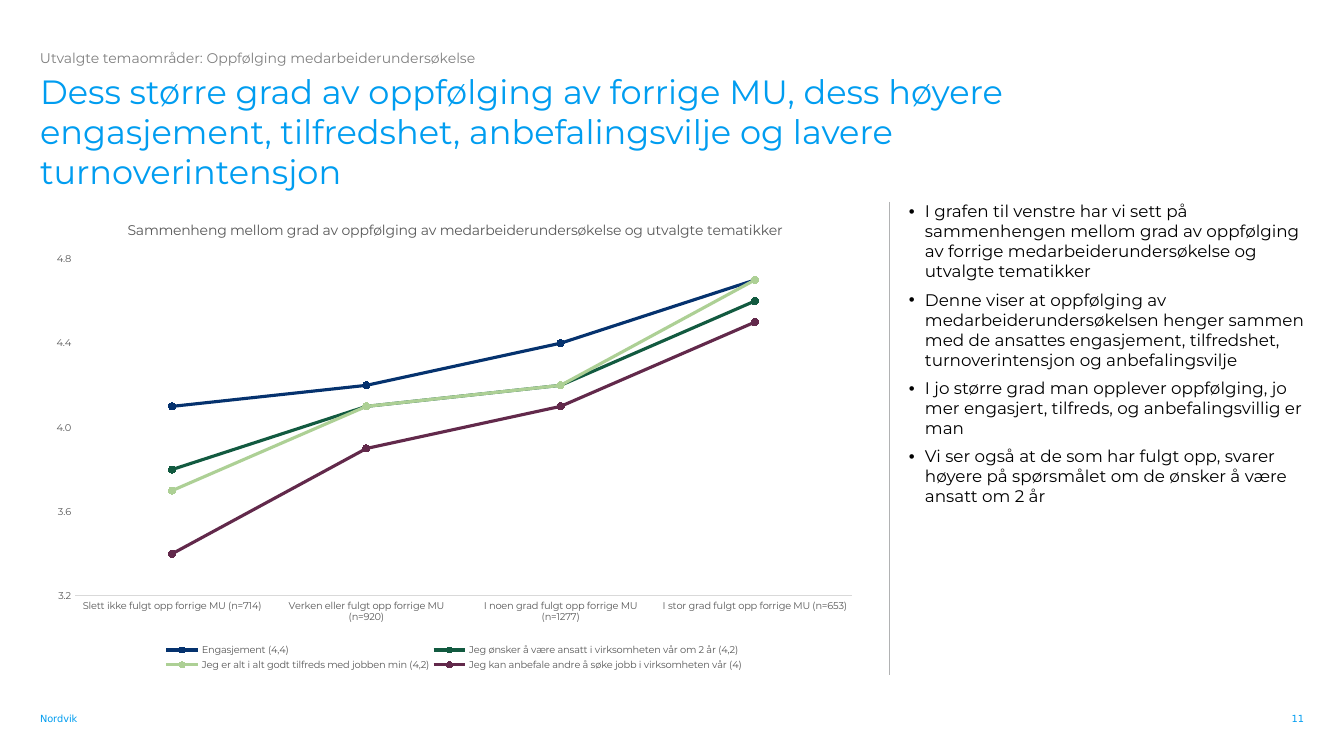
"""Build the slide on follow-up of the employee survey and its related themes."""
from dataclasses import dataclass
from typing import Any

import lxml.etree
import pptx
import pptx.chart.data
import pptx.dml.color
import pptx.enum.chart
import pptx.enum.shapes
import pptx.enum.text
import pptx.oxml
import pptx.oxml.ns
import pptx.util

RGBColor = pptx.dml.color.RGBColor
ALIGN = pptx.enum.text.PP_ALIGN
ANCHOR = pptx.enum.text.MSO_ANCHOR

PX_PER_INCH = 100.8
BLACK = RGBColor(0x00, 0x00, 0x00)
WHITE = RGBColor(0xFF, 0xFF, 0xFF)
CYAN = RGBColor(0x00, 0x9D, 0xF0)
GREY = RGBColor(0x80, 0x80, 0x80)
LABEL_GREY = RGBColor(0x59, 0x59, 0x59)
AXIS_GREY = RGBColor(0xD9, 0xD9, 0xD9)
DIVIDER_GREY = RGBColor(0xB1, 0xB2, 0xB3)
NAVY = RGBColor(0x05, 0x32, 0x6E)
FOREST = RGBColor(0x12, 0x5A, 0x40)
LIME = RGBColor(0xAD, 0xD0, 0x95)
PLUM = RGBColor(0x62, 0x29, 0x4B)
TEXT_FONT = "Montserrat"
FOOTER_FONT = "DejaVu Sans"


@dataclass(frozen=True)
class Box:
    left: int
    top: int
    width: int
    height: int


@dataclass(frozen=True)
class Label:
    text: str
    box: Box
    size: int
    color: RGBColor
    font: str = TEXT_FONT
    align: Any = ALIGN.LEFT
    anchor: Any = ANCHOR.TOP


@dataclass(frozen=True)
class Theme:
    name: str
    scores: tuple[float, ...]
    color: RGBColor


HEADING = Label(
    "Dess større grad av oppfølging av forrige MU, dess høyere engasjement, "
    "tilfredshet, anbefalingsvilje og lavere turnoverintensjon",
    Box(40, 73, 1155, 103), 24, CYAN)
FINDINGS = Label(
    "I grafen til venstre har vi sett på sammenhengen mellom grad av oppfølging "
    "av forrige medarbeiderundersøkelse og utvalgte tematikker\n"
    "Denne viser at oppfølging av medarbeiderundersøkelsen henger sammen med de "
    "ansattes engasjement, tilfredshet, turnoverintensjon og anbefalingsvilje\n"
    "I jo større grad man opplever oppfølging, jo mer engasjert, tilfreds, og "
    "anbefalingsvillig er man\n"
    "Vi ser også at de som har fulgt opp, svarer høyere på spørsmålet om de "
    "ønsker å være ansatt om 2 år",
    Box(909, 202, 398, 474), 12, BLACK)
LABELS = (
    Label("Utvalgte temaområder: Oppfølging medarbeiderundersøkelse",
          Box(40, 50, 454, 17), 10, GREY),
    Label("Nordvik", Box(40, 701, 86, 24), 7, CYAN, FOOTER_FONT, anchor=ANCHOR.BOTTOM),
    Label("11", Box(1234, 713, 70, 12), 7, CYAN, FOOTER_FONT, ALIGN.RIGHT, ANCHOR.BOTTOM),
)
CHART_BOX = Box(39, 202, 830, 474)
PLOT_BOX = Box(75, 259, 777, 337)
CHART_TITLE_BOX = Box(125, 218, 657, 18)
LEGEND_BOX = Box(162, 641, 584, 33)
CHART_TITLE = ("Sammenheng mellom grad av oppfølging av medarbeiderundersøkelse "
               "og utvalgte tematikker")
FOLLOW_UP_GRADES = (
    "Slett ikke fulgt opp forrige MU (n=714)",
    "Verken eller fulgt opp forrige MU (n=920)",
    "I noen grad fulgt opp forrige MU (n=1277)",
    "I stor grad fulgt opp forrige MU (n=653)",
)
THEMES = (
    Theme("Engasjement (4,4)", (4.1, 4.2, 4.4, 4.7), NAVY),
    Theme("Jeg ønsker å være ansatt i virksomheten vår om 2 år (4,2)",
          (3.8, 4.1, 4.2, 4.6), FOREST),
    Theme("Jeg er alt i alt godt tilfreds med jobben min (4,2)",
          (3.7, 4.1, 4.2, 4.7), LIME),
    Theme("Jeg kan anbefale andre å søke jobb i virksomheten vår (4)",
          (3.4, 3.9, 4.1, 4.5), PLUM),
)


def px(length: int) -> pptx.util.Emu:
    return pptx.util.Emu(round(length * 914400 / PX_PER_INCH))


def edges(box: Box) -> tuple[pptx.util.Emu, ...]:
    return px(box.left), px(box.top), px(box.width), px(box.height)


def assign(target: Any, values: dict[str, Any]) -> None:
    for name, value in values.items():
        setattr(target, name, value)


def style_font(font: Any, size: int, color: RGBColor, family: str = TEXT_FONT) -> None:
    assign(font, {"size": pptx.util.Pt(size), "name": family, "bold": False})
    font.color.rgb = color


def write_label(holder: Any, label: Label, space_after: int = 0) -> None:
    left, top, width, height = edges(label.box)
    assign(holder, {"left": left, "top": top, "width": width, "height": height})
    frame = holder.text_frame
    assign(frame, {
        "text": label.text, "word_wrap": True, "vertical_anchor": label.anchor,
        "auto_size": pptx.enum.text.MSO_AUTO_SIZE.NONE,
        "margin_left": 0, "margin_top": 0, "margin_right": 0, "margin_bottom": 0,
    })
    for paragraph in frame.paragraphs:
        assign(paragraph, {"alignment": label.align, "line_spacing": 0.99,
                           "space_before": pptx.util.Pt(0),
                           "space_after": pptx.util.Pt(space_after)})
        style_font(paragraph.runs[0].font, label.size, label.color, label.font)


def add_bullets(frame: Any) -> None:
    for paragraph in frame.paragraphs:
        properties = paragraph._p.get_or_add_pPr()
        properties.set("marL", str(px(16)))
        properties.set("indent", str(px(-16)))
        bullet = lxml.etree.SubElement(properties, pptx.oxml.ns.qn("a:buChar"))
        bullet.set("char", "•")


def place_chart_part(part: Any, box: Box, index: int, inner: bool = False) -> None:
    for previous in part.findall(pptx.oxml.ns.qn("c:layout")):
        part.remove(previous)
    layout = pptx.oxml.parse_xml(f"<c:layout {pptx.oxml.ns.nsdecls('c')}><c:manualLayout/></c:layout>")
    settings = {
        **({"layoutTarget": "inner"} if inner else {}),
        "xMode": "edge", "yMode": "edge",
        "x": round((box.left - CHART_BOX.left) / CHART_BOX.width, 4),
        "y": round((box.top - CHART_BOX.top) / CHART_BOX.height, 4),
        "w": round(box.width / CHART_BOX.width, 4),
        "h": round(box.height / CHART_BOX.height, 4),
    }
    for name, value in settings.items():
        lxml.etree.SubElement(layout[0], pptx.oxml.ns.qn(f"c:{name}")).set("val", str(value))
    part.insert(index, layout)


def add_theme_chart(slide: Any) -> None:
    survey = pptx.chart.data.CategoryChartData(number_format="###0.0")
    survey.categories = FOLLOW_UP_GRADES
    for theme in THEMES:
        survey.add_series(theme.name, theme.scores)
    chart = slide.shapes.add_chart(
        pptx.enum.chart.XL_CHART_TYPE.LINE_MARKERS, *edges(CHART_BOX), survey).chart
    style_font(chart.font, 10, BLACK)
    assign(chart, {"has_title": True, "has_legend": True})
    heading = chart.chart_title.text_frame
    heading.text = CHART_TITLE
    style_font(heading.paragraphs[0].runs[0].font, 10, LABEL_GREY)
    assign(chart.legend, {"position": pptx.enum.chart.XL_LEGEND_POSITION.BOTTOM,
                          "include_in_layout": False})
    style_font(chart.legend.font, 7, LABEL_GREY)

    for axis in (chart.category_axis, chart.value_axis):
        assign(axis, {"has_major_gridlines": False,
                      "major_tick_mark": pptx.enum.chart.XL_TICK_MARK.NONE,
                      "minor_tick_mark": pptx.enum.chart.XL_TICK_MARK.NONE})
        style_font(axis.tick_labels.font, 7, LABEL_GREY)
    chart.category_axis._element.txPr.bodyPr.set("rot", "0")
    chart.category_axis.format.line.color.rgb = AXIS_GREY
    chart.category_axis.format.line.width = pptx.util.Pt(0.75)
    assign(chart.value_axis, {"minimum_scale": 3.2, "maximum_scale": 4.8, "major_unit": 0.4})
    assign(chart.value_axis.tick_labels, {"number_format": "###0.0",
                                          "number_format_is_linked": False})
    chart.value_axis.format.line.fill.background()

    chart.plots[0].vary_by_categories = False
    for curve, theme in zip(chart.plots[0].series, THEMES):
        curve.smooth = False
        curve.format.line.color.rgb = theme.color
        curve.format.line.width = pptx.util.Pt(2.25)
        assign(curve.marker, {"style": pptx.enum.chart.XL_MARKER_STYLE.CIRCLE, "size": 5})
        curve.marker.format.fill.solid()
        curve.marker.format.fill.fore_color.rgb = theme.color
        curve.marker.format.line.color.rgb = theme.color

    place_chart_part(chart.chart_title._element, CHART_TITLE_BOX, 1)
    place_chart_part(chart.legend._element, LEGEND_BOX, 1)
    place_chart_part(chart._chartSpace.chart.plotArea, PLOT_BOX, 0, inner=True)


def add_divider(slide: Any) -> None:
    divider = slide.shapes.add_connector(
        pptx.enum.shapes.MSO_CONNECTOR.STRAIGHT, px(889), px(202), px(889), px(675))
    divider.line.color.rgb = DIVIDER_GREY
    divider.line.width = pptx.util.Pt(0.5)
    lxml.etree.SubElement(divider._element.spPr, pptx.oxml.ns.qn("a:effectLst"))


def main() -> None:
    deck = pptx.Presentation()
    assign(deck, {"slide_width": px(1344), "slide_height": px(756)})
    slide = deck.slides.add_slide(deck.slide_layouts[1])
    slide.background.fill.solid()
    slide.background.fill.fore_color.rgb = WHITE
    add_divider(slide)
    write_label(slide.shapes.title, HEADING)
    findings = slide.placeholders[1]
    write_label(findings, FINDINGS, space_after=6)
    add_bullets(findings.text_frame)
    for label in LABELS:
        write_label(slide.shapes.add_textbox(*edges(label.box)), label)
    add_theme_chart(slide)
    deck.save("out.pptx")


if __name__ == "__main__":
    main()
